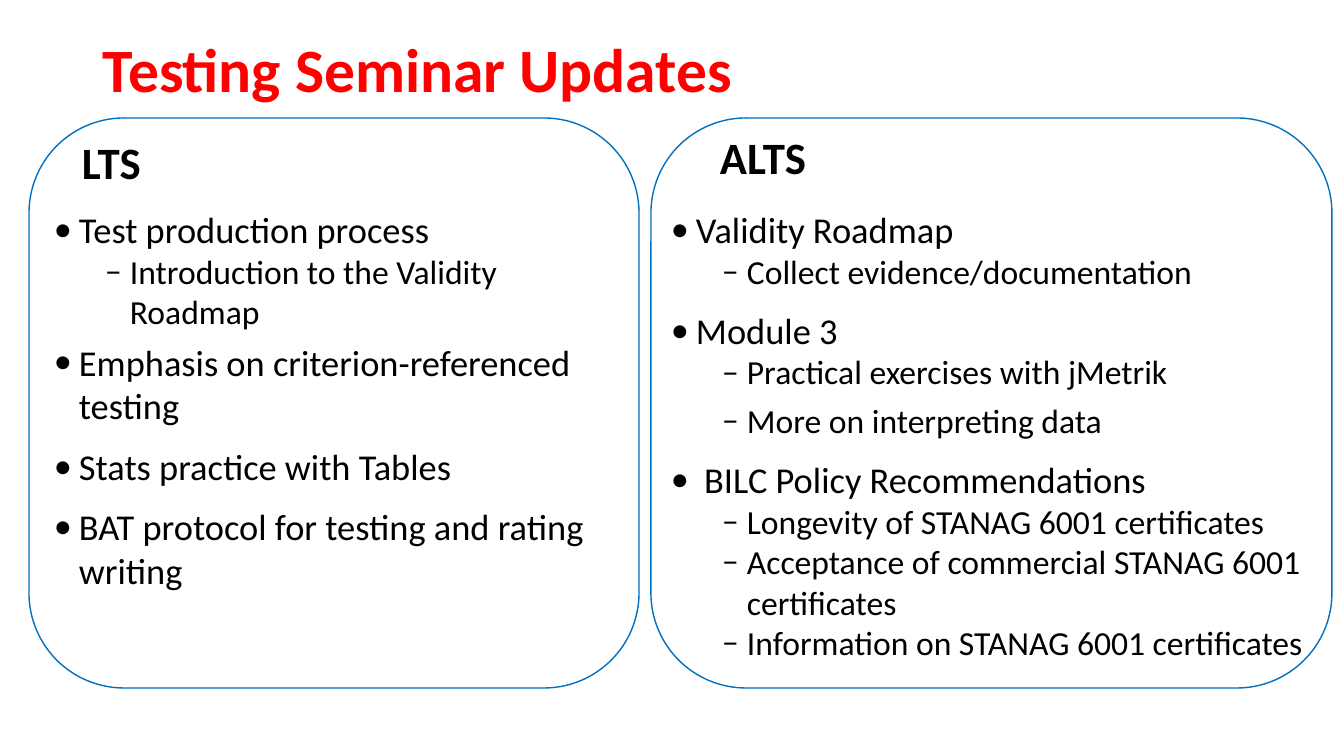
from lxml.etree import SubElement
from pptx import Presentation
from pptx.dml.color import RGBColor
from pptx.enum.shapes import MSO_SHAPE
from pptx.enum.text import MSO_ANCHOR
from pptx.oxml.ns import qn
from pptx.util import Pt

EMU_PER_PX = 914400 / 100.8
RED = RGBColor(0xFF, 0x00, 0x00)
BLACK = RGBColor(0x00, 0x00, 0x00)
BLUE = RGBColor(0x00, 0x70, 0xC0)
BULLETS = ["•", "‒"]
BULLET_SIZES = [26, 24]
BULLET_MARGINS = [25, 76]
HANGING = 25


def px(*lengths):
    return [round(length * EMU_PER_PX) for length in lengths]


def write(paragraph, text, size, color=BLACK, bold=False, level=None,
          before=0, after=0, spacing=1.0):
    if level is not None:
        margin, hanging = px(BULLET_MARGINS[level], HANGING)
        paragraph.level = level
        properties = paragraph._p.get_or_add_pPr()
        properties.set("marL", str(margin))
        properties.set("indent", str(-hanging))
        SubElement(properties, qn("a:buFont"), typeface="Calibri")
        SubElement(properties, qn("a:buChar"), char=BULLETS[level])
    paragraph.line_spacing = spacing
    paragraph.space_before = Pt(before)
    paragraph.space_after = Pt(after)
    run = paragraph.add_run()
    run.text = text
    run.font.name = "Calibri"
    run.font.size = Pt(size)
    run.font.bold = bold
    run.font.color.rgb = color


presentation = Presentation()
presentation.slide_width, presentation.slide_height = px(1344, 756)
slide = presentation.slides.add_slide(presentation.slide_layouts[6])

headings = [
    ("Testing Seminar Updates", (93, 0, 1159, 146), 44, RED, MSO_ANCHOR.MIDDLE),
    ("LTS", (72, 118, 569, 76), 32, BLACK, MSO_ANCHOR.BOTTOM),
    ("ALTS", (710, 118, 572, 71), 32, BLACK, MSO_ANCHOR.BOTTOM),
]
for text, box, size, color, anchor in headings:
    frame = slide.shapes.add_textbox(*px(*box)).text_frame
    frame.word_wrap = True
    frame.vertical_anchor = anchor
    write(frame.paragraphs[0], text, size, color=color, bold=True, spacing=0.9)

seminar_lists = [
    ((44, 202, 580, 504), [
        ("Test production process", 0, 0, 0),
        ("Introduction to the Validity Roadmap", 1, 0, 0),
        ("Emphasis on criterion-referenced testing", 0, 6, 6),
        ("Stats practice with Tables", 0, 6, 6),
        ("BAT protocol for testing and rating writing", 0, 6, 6),
    ]),
    ((661, 202, 683, 537), [
        ("Validity Roadmap", 0, 0, 0),
        ("Collect evidence/documentation", 1, 0, 6),
        ("Module 3", 0, 6, 0),
        ("Practical exercises with jMetrik", 1, 0, 6),
        ("More on interpreting data", 1, 0, 6),
        (" BILC Policy Recommendations", 0, 6, 0),
        ("Longevity of STANAG 6001 certificates", 1, 0, 0),
        ("Acceptance of commercial STANAG 6001 certificates", 1, 0, 0),
        ("Information on STANAG 6001 certificates", 1, 0, 0),
    ]),
]
for box, items in seminar_lists:
    frame = slide.shapes.add_textbox(*px(*box)).text_frame
    frame.word_wrap = True
    for index, (text, level, before, after) in enumerate(items):
        paragraph = frame.add_paragraph() if index else frame.paragraphs[0]
        write(paragraph, text, BULLET_SIZES[level], level=level,
              before=before, after=after)

for left, width in [(651, 681), (29, 610)]:
    panel = slide.shapes.add_shape(MSO_SHAPE.ROUNDED_RECTANGLE,
                                   *px(left, 118, width, 570))
    panel.shadow.inherit = False
    panel.fill.background()
    panel.line.color.rgb = BLUE
    panel.line.width = Pt(1)

presentation.save("out.pptx")
